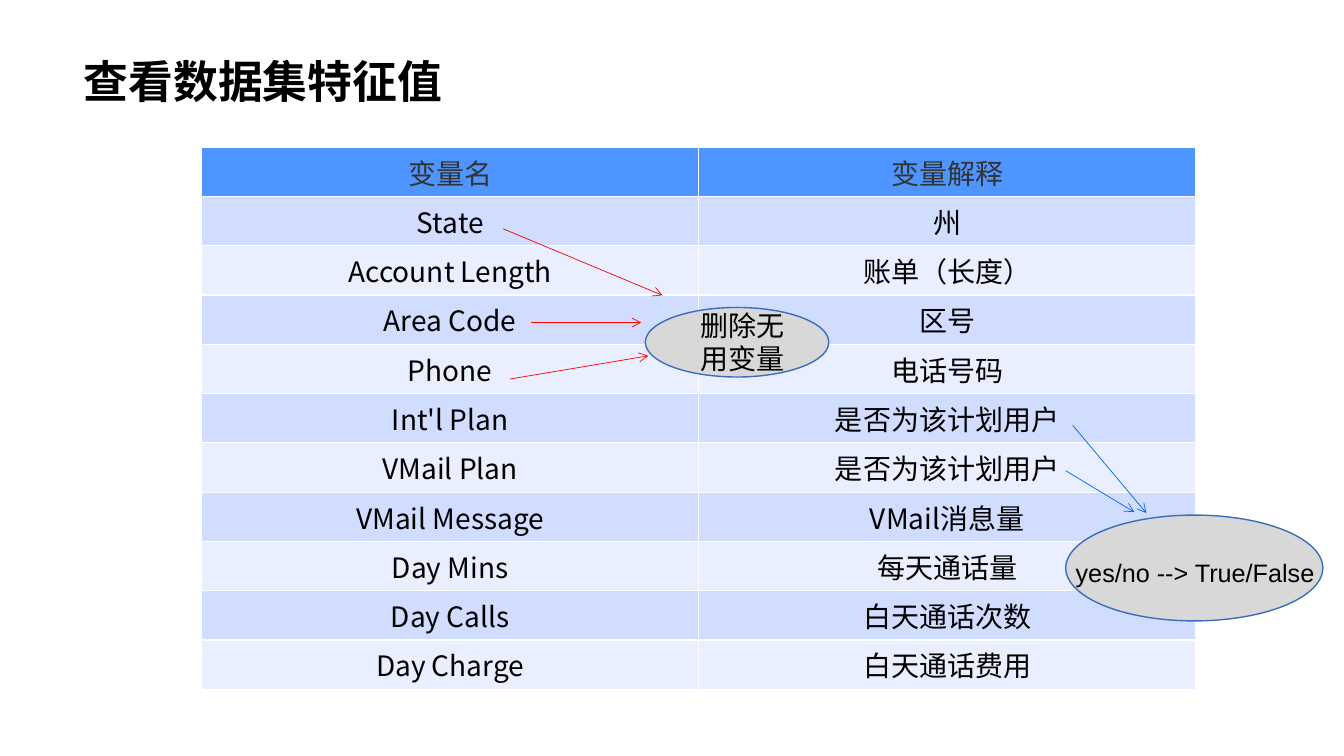
from lxml.etree import SubElement
from pptx import Presentation
from pptx.dml.color import RGBColor
from pptx.enum.shapes import MSO_CONNECTOR, MSO_SHAPE
from pptx.enum.text import MSO_ANCHOR, MSO_AUTO_SIZE, PP_ALIGN
from pptx.oxml.ns import qn
from pptx.util import Inches, Pt

BLACK = RGBColor(0x00, 0x00, 0x00)
HEADER_TEXT = RGBColor(0x33, 0x33, 0x33)
HEADER_FILL = RGBColor(0x4F, 0x95, 0xFF)
ODD_FILL = RGBColor(0xD0, 0xDD, 0xFF)
EVEN_FILL = RGBColor(0xE9, 0xEF, 0xFF)
RED = RGBColor(0xFF, 0x00, 0x00)
BLUE = RGBColor(0x00, 0x64, 0xFB)
GREY = RGBColor(0xD8, 0xD8, 0xD8)
OUTLINE = RGBColor(0x3A, 0x6E, 0xBD)

LATIN_FONT = "Arial"
TABLE_FONT = "Noto Sans CJK SC"

TITLE = "查看数据集特征值"
VARIABLES = [
    ("变量名", "变量解释"),
    ("State", "州"),
    ("Account Length", "账单（长度）"),
    ("Area Code", "区号"),
    ("Phone", "电话号码"),
    ("Int'l Plan", "是否为该计划用户"),
    ("VMail Plan", "是否为该计划用户"),
    ("VMail Message", "VMail消息量"),
    ("Day Mins", "每天通话量"),
    ("Day Calls", "白天通话次数"),
    ("Day Charge", "白天通话费用"),
]
NOTES = [
    {
        "text": "删除无用变量", "size": 20, "wrap": True,
        "oval": (6.4, 3.05, 1.82, 0.69), "label": (6.85, 3.01, 1.09, 0.77),
        "color": RED,
        "arrows": [(4.99, 2.27, 6.57, 2.93), (5.27, 3.2, 6.36, 3.2),
                   (5.06, 3.76, 6.43, 3.53)],
    },
    {
        "text": "yes/no --> True/False", "size": 18, "wrap": False,
        "oval": (10.57, 5.11, 2.55, 1.05), "label": (10.57, 5.48, 2.65, 0.4),
        "color": BLUE,
        "arrows": [(10.64, 4.22, 11.37, 5.09), (10.57, 4.67, 11.25, 5.08)],
    },
]
TABLE_BOX = (2, 1.46, 9.86, 5.38)


def inches(lengths):
    return [Inches(length) for length in lengths]


def format_text(frame, size, font_name, color, bold=False):
    for paragraph in frame.paragraphs:
        for run in paragraph.runs:
            font = run.font
            font.size, font.name, font.bold = Pt(size), font_name, bold
            font.color.rgb = color
            SubElement(run._r.get_or_add_rPr(), qn("a:ea"), typeface=font_name)


def add_title(slide):
    title = slide.shapes.title
    title.left, title.top, title.width, title.height = inches((0.73, 0, 11.87, 1.12))
    frame = title.text_frame
    frame.text = TITLE
    frame.vertical_anchor = MSO_ANCHOR.BOTTOM
    frame.paragraphs[0].alignment = PP_ALIGN.LEFT
    frame.paragraphs[0].line_spacing = 0.9
    format_text(frame, 32, LATIN_FONT, BLACK, bold=True)


def add_variables(slide):
    table = slide.shapes.add_table(len(VARIABLES), 2, *inches(TABLE_BOX)).table
    for row, entries in enumerate(VARIABLES):
        fill = HEADER_FILL if row == 0 else ODD_FILL if row % 2 else EVEN_FILL
        for column, entry in enumerate(entries):
            cell = table.cell(row, column)
            cell.margin_left = cell.margin_right = 0
            cell.margin_top = cell.margin_bottom = 0
            cell.vertical_anchor = MSO_ANCHOR.MIDDLE
            cell.fill.solid()
            cell.fill.fore_color.rgb = fill
            cell.text_frame.text = entry
            cell.text_frame.paragraphs[0].alignment = PP_ALIGN.CENTER
            format_text(cell.text_frame, 20, TABLE_FONT, BLACK if row else HEADER_TEXT)


def add_arrow(slide, ends, color):
    arrow = slide.shapes.add_connector(MSO_CONNECTOR.STRAIGHT, *inches(ends))
    arrow.line.color.rgb = color
    arrow.line.width = Pt(0.5)
    SubElement(arrow.line._get_or_add_ln(), qn("a:tailEnd"), type="arrow")
    SubElement(arrow._element.spPr, qn("a:effectLst"))


def add_note(slide, note):
    oval = slide.shapes.add_shape(MSO_SHAPE.OVAL, *inches(note["oval"]))
    oval.shadow.inherit = False
    oval.fill.solid()
    oval.fill.fore_color.rgb = GREY
    oval.line.color.rgb = OUTLINE
    oval.line.width = Pt(1)
    for ends in note["arrows"]:
        add_arrow(slide, ends, note["color"])
    frame = slide.shapes.add_textbox(*inches(note["label"])).text_frame
    frame.word_wrap = note["wrap"]
    frame.auto_size = MSO_AUTO_SIZE.SHAPE_TO_FIT_TEXT
    frame.text = note["text"]
    format_text(frame, note["size"], LATIN_FONT, BLACK)


def main():
    presentation = Presentation()
    presentation.slide_width, presentation.slide_height = inches((13.33, 7.5))
    slide = presentation.slides.add_slide(presentation.slide_layouts[5])
    add_title(slide)
    add_variables(slide)
    for note in NOTES:
        add_note(slide, note)
    presentation.save("out.pptx")


if __name__ == "__main__":
    main()
